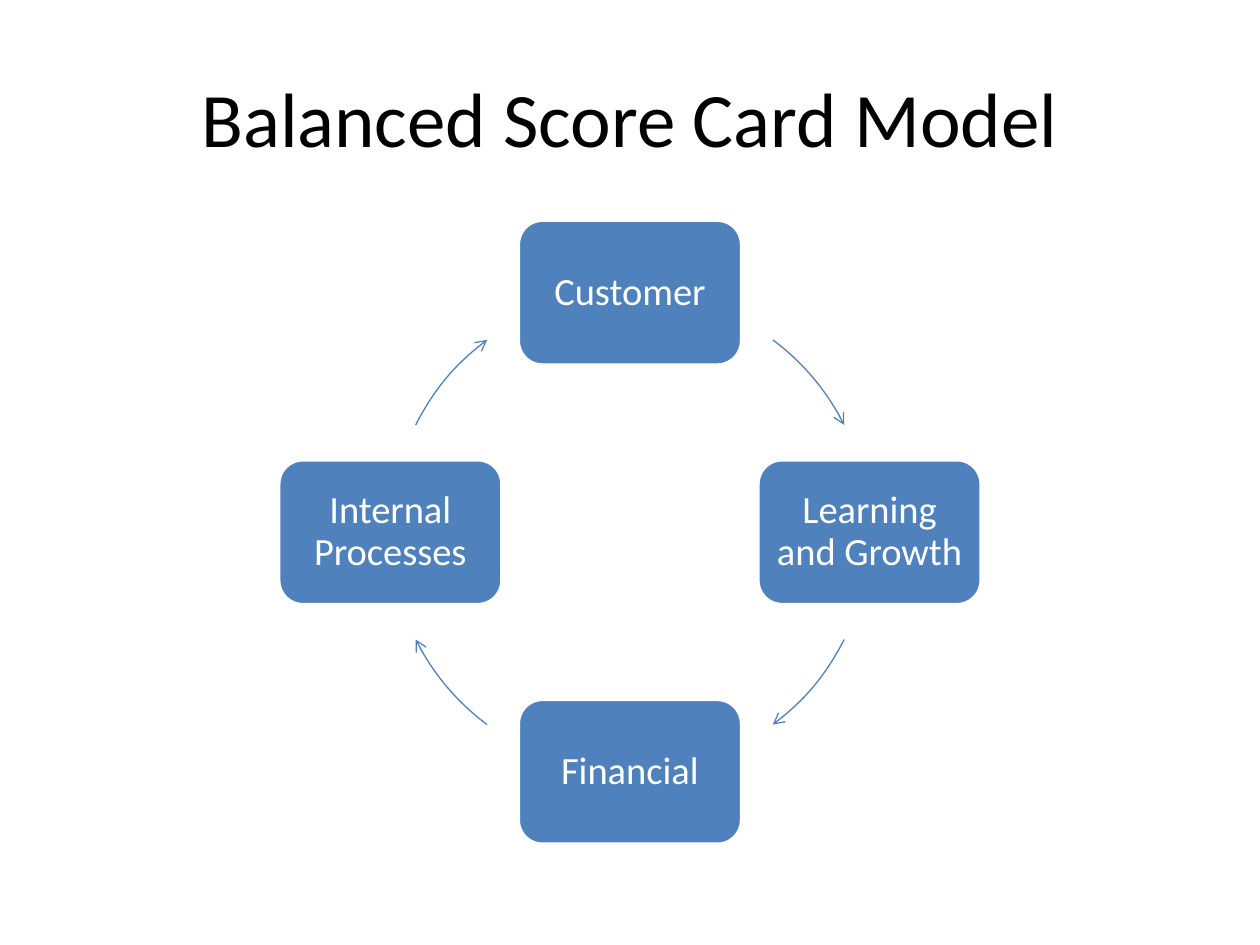
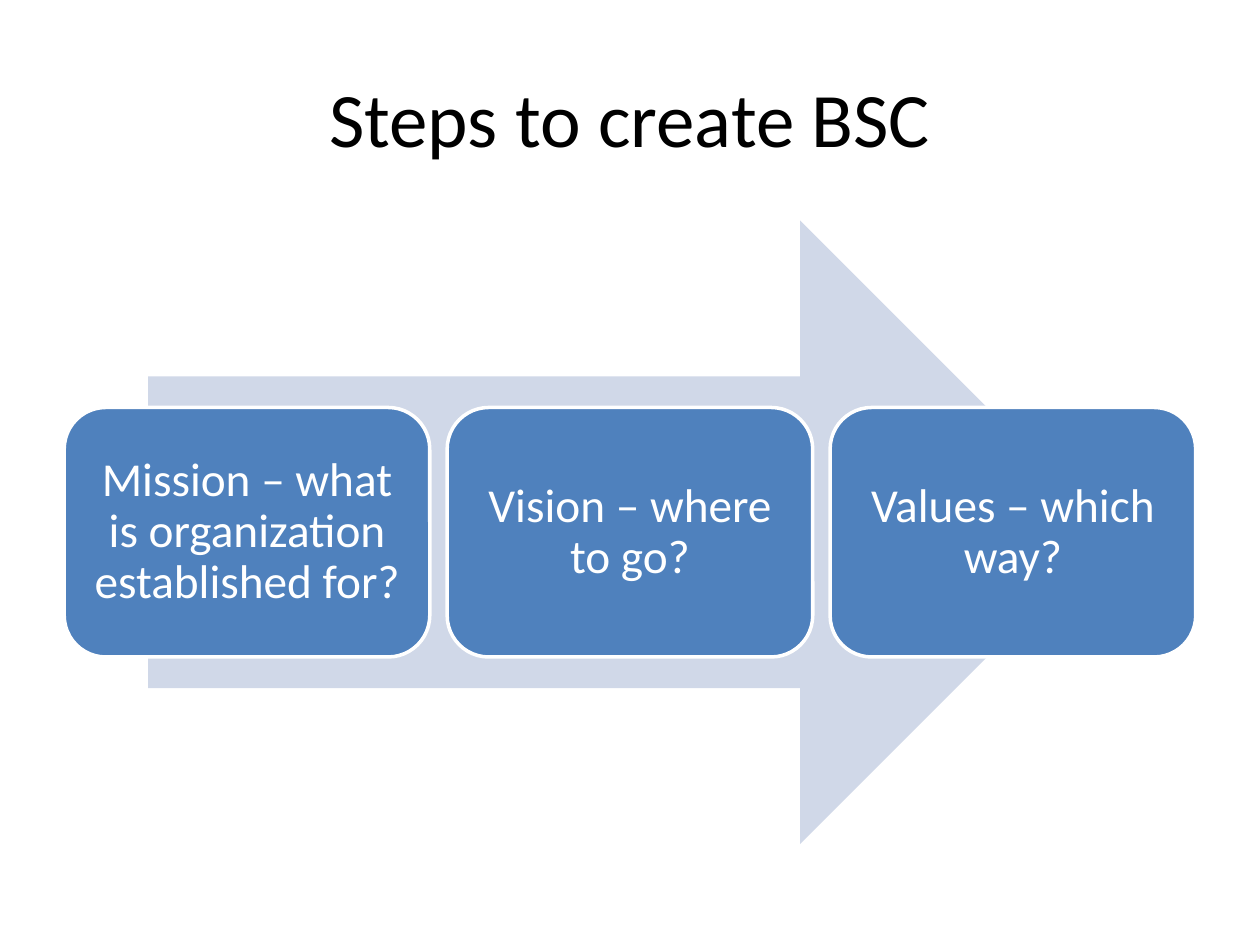
from math import cos, radians, sin

from lxml.etree import SubElement
from pptx import Presentation
from pptx.dml.color import RGBColor
from pptx.enum.shapes import MSO_SHAPE
from pptx.enum.text import MSO_ANCHOR, PP_ALIGN
from pptx.oxml.ns import qn
from pptx.util import Cm, Pt

COLORS = {"ink": "000000", "white": "FFFFFF", "blue": "4F81BD", "pale": "D0D8E8"}
FONT = "Calibri"
MID_X, MID_Y = 12.7, 10.73


def color(name):
    return RGBColor.from_string(COLORS[name])


class Deck:
    """Holds the shared style and the current slide; lengths are in cm."""

    def __init__(self):
        self.prs = Presentation()
        self.prs.slide_width, self.prs.slide_height = Cm(25.4), Cm(19.05)
        self.slide = None

    def page(self, title):
        self.slide = self.prs.slides.add_slide(self.prs.slide_layouts[6])
        box = self.slide.shapes.add_textbox(Cm(1.27), Cm(0.76), Cm(22.86), Cm(3.18))
        self.label(box.text_frame, title, 44, "ink")

    def label(self, frame, text, size, ink):
        frame.text = text
        frame.word_wrap = True
        frame.vertical_anchor = MSO_ANCHOR.MIDDLE
        par = frame.paragraphs[0]
        par.alignment = PP_ALIGN.CENTER
        font = par.runs[0].font
        font.name, font.size = FONT, Pt(size)
        font.color.rgb = color(ink)

    def shape(self, kind, x, y, width, height, fill=None, line=None, weight=0):
        """Add a preset shape centred on x, y."""
        item = self.slide.shapes.add_shape(
            kind, Cm(x - width / 2), Cm(y - height / 2), Cm(width), Cm(height))
        item.shadow.inherit = False
        if fill:
            item.fill.solid()
            item.fill.fore_color.rgb = color(fill)
        else:
            item.fill.background()
        if line:
            item.line.color.rgb = color(line)
            item.line.width = Pt(weight)
        else:
            item.line.fill.background()
        return item

    def card(self, text, x, y, width, height, size, inset):
        item = self.shape(MSO_SHAPE.ROUNDED_RECTANGLE, x, y, width, height,
                          "blue", "white", 2)
        frame = item.text_frame
        frame.margin_left = frame.margin_right = Cm(inset)
        frame.margin_top = frame.margin_bottom = Cm(inset)
        self.label(frame, text, size, "white")
        frame.paragraphs[0].line_spacing = 0.9

    def arc(self, x, y, radius, start, end):
        """Add a clockwise arc with an arrowhead; angles are in degrees."""
        item = self.shape(MSO_SHAPE.ARC, x, y, 2 * radius, 2 * radius,
                          line="blue", weight=0.75)
        for i, angle in enumerate((start, end)):
            # Angles are stored in 1/60000 degree, adjustments in 1/100000.
            item.adjustments[i] = angle % 360 * 0.6
        line = item.element.spPr.find(qn("a:ln"))
        SubElement(line, qn("a:tailEnd"), type="arrow")


def model(deck):
    deck.page("Balanced Score Card Model")
    radius, half = 4.83, 13.4
    names = ("Customer", "Learning and Growth", "Financial", "Internal Processes")
    middles = (-40, 40, 140, 220)
    for i, (name, middle) in enumerate(zip(names, middles)):
        turn = radians(90 * i - 90)
        deck.card(name, MID_X + radius * cos(turn), MID_Y + radius * sin(turn),
                  4.5, 2.92, 22, 0.23)
        deck.arc(MID_X, MID_Y, radius, middle - half, middle + half)


def steps(deck):
    deck.page("Steps to create BSC")
    deck.shape(MSO_SHAPE.RIGHT_ARROW, MID_X, MID_Y, 19.43, 12.57, "pale")
    texts = ("Mission – what is organization established for?",
             "Vision – where to go?", "Values – which way?")
    pitch = 7.72
    for i, text in enumerate(texts):
        deck.card(text, MID_X + (i - 1) * pitch, MID_Y, 7.37, 5.03, 27, 0.28)


def main():
    deck = Deck()
    model(deck)
    steps(deck)
    deck.prs.save("out.pptx")


if __name__ == "__main__":
    main()
